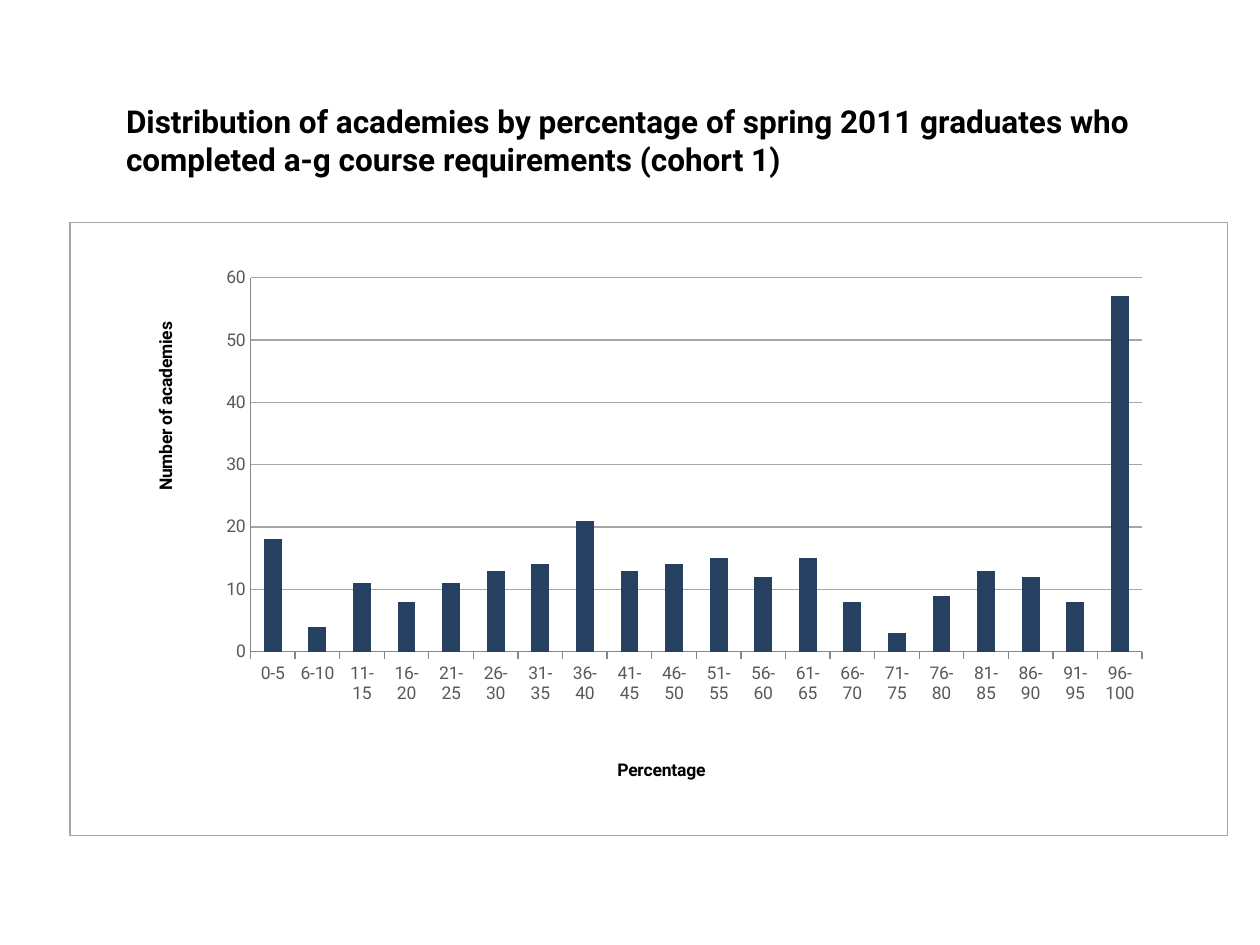
from lxml.etree import SubElement as Sub
from pptx import Presentation
from pptx.chart.data import CategoryChartData as Data
from pptx.dml.color import RGBColor
from pptx.enum.chart import XL_CHART_TYPE as Kind, XL_TICK_MARK as Tick
from pptx.enum.text import MSO_ANCHOR as Anchor, PP_ALIGN as Align
from pptx.oxml import parse_xml
from pptx.oxml.ns import nsdecls, qn
from pptx.util import Inches, Pt

FACE = "Roboto"
BLACK = RGBColor(0x00, 0x00, 0x00)
NAVY = RGBColor(0x25, 0x40, 0x61)
SLATE = RGBColor(0x59, 0x59, 0x59)
GRAY = RGBColor(0xA6, 0xA6, 0xA6)
DARK = RGBColor(0x86, 0x86, 0x86)
WIDE, HIGH = Inches(10), Inches(7.5)

HEAD = ("Distribution of academies by percentage of spring 2011 graduates "
        "who completed a-g course requirements (cohort 1)")
COUNTS = (18, 4, 11, 8, 11, 13, 14, 21, 13, 14,
          15, 12, 15, 8, 3, 9, 13, 12, 8, 57)
BANDS = ["0-5"] + [f"{low}-{low + 4}" for low in range(6, 100, 5)]


def share(left, top, width, height):
    return (int(WIDE * left), int(HIGH * top),
            int(WIDE * width), int(HIGH * height))


def style(font, size, color, bold=False):
    font.name, font.size, font.bold = FACE, Pt(size), bold
    font.color.rgb = color


def rule(line, color):
    line.color.rgb = color
    line.width = Pt(0.75)


def place(node, index, **parts):
    for old in node.findall(qn("c:layout")):
        node.remove(old)
    layout = parse_xml(f"<c:layout {nsdecls('c')}/>")
    manual = Sub(layout, qn("c:manualLayout"))
    for tag, value in parts.items():
        Sub(manual, qn(f"c:{tag}")).set("val", str(value))
    node.insert(index, layout)


def name_axis(axis, text, left, top, turn):
    frame = axis.axis_title.text_frame
    frame.text = text
    style(frame.paragraphs[0].font, 10, BLACK, True)
    body = axis.axis_title._element.find(".//" + qn("a:bodyPr"))
    body.set("rot", str(turn * 60000))
    body.set("vert", "horz")
    place(axis.axis_title._element, 1,
          xMode="edge", yMode="edge", x=left, y=top)
    style(axis.tick_labels.font, 10, SLATE)
    rule(axis.format.line, DARK)
    axis.minor_tick_mark = Tick.NONE


def add_title(slide, box):
    title = slide.shapes.title
    title.left, title.top, title.width, title.height = box
    frame = title.text_frame
    frame.text = HEAD
    frame.word_wrap = True
    frame.vertical_anchor = Anchor.TOP
    para = frame.paragraphs[0]
    para.alignment = Align.LEFT
    style(para.font, 18, BLACK, True)


def add_border(chart):
    border = parse_xml(
        f'<c:spPr {nsdecls("c", "a")}><a:noFill/><a:ln w="{Pt(0.75)}">'
        f'<a:solidFill><a:srgbClr val="{GRAY}"/></a:solidFill></a:ln></c:spPr>')
    chart._chartSpace.find(qn("c:chart")).addnext(border)


def add_bars(slide, box):
    data = Data()
    data.categories = BANDS
    data.add_series("Series 1", COUNTS)
    chart = slide.shapes.add_chart(Kind.COLUMN_CLUSTERED, *box, data).chart
    chart.has_title = chart.has_legend = False
    style(chart.font, 10, BLACK)
    add_border(chart)

    plot = chart.plots[0]
    plot.gap_width = 150
    plot.vary_by_categories = False
    fill = plot.series[0].format.fill
    fill.solid()
    fill.fore_color.rgb = NAVY
    area = chart._chartSpace.find(".//" + qn("c:plotArea"))
    place(area, 0, layoutTarget="inner", xMode="edge", yMode="edge",
          x=0.156, y=0.09, w=0.77, h=0.61)

    cats, vals = chart.category_axis, chart.value_axis
    name_axis(cats, "Percentage", 0.47, 0.87, 0)
    name_axis(vals, "Number of academies", 0.07, 0.157, -90)
    cats.major_tick_mark = Tick.OUTSIDE
    vals.major_tick_mark = Tick.NONE
    vals.minimum_scale, vals.maximum_scale, vals.major_unit = 0, 60, 10
    rule(vals.major_gridlines.format.line, GRAY)


def main():
    deck = Presentation()
    deck.slide_width, deck.slide_height = WIDE, HIGH
    slide = deck.slides.add_slide(deck.slide_layouts[5])
    add_bars(slide, share(0.055, 0.235, 0.92, 0.65))
    add_title(slide, share(0.09, 0.101, 0.835, 0.095))
    deck.save("out.pptx")


if __name__ == "__main__":
    main()
